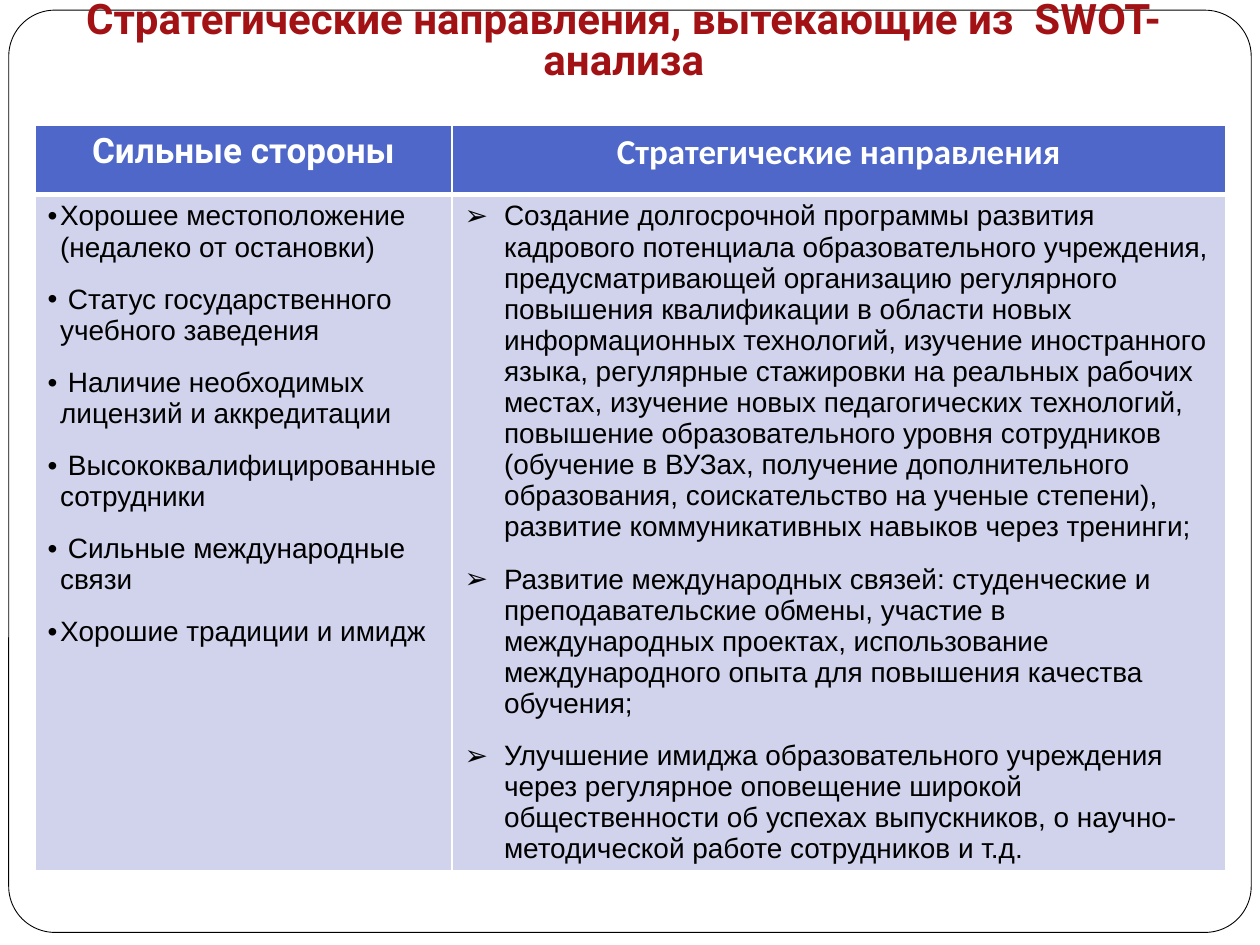
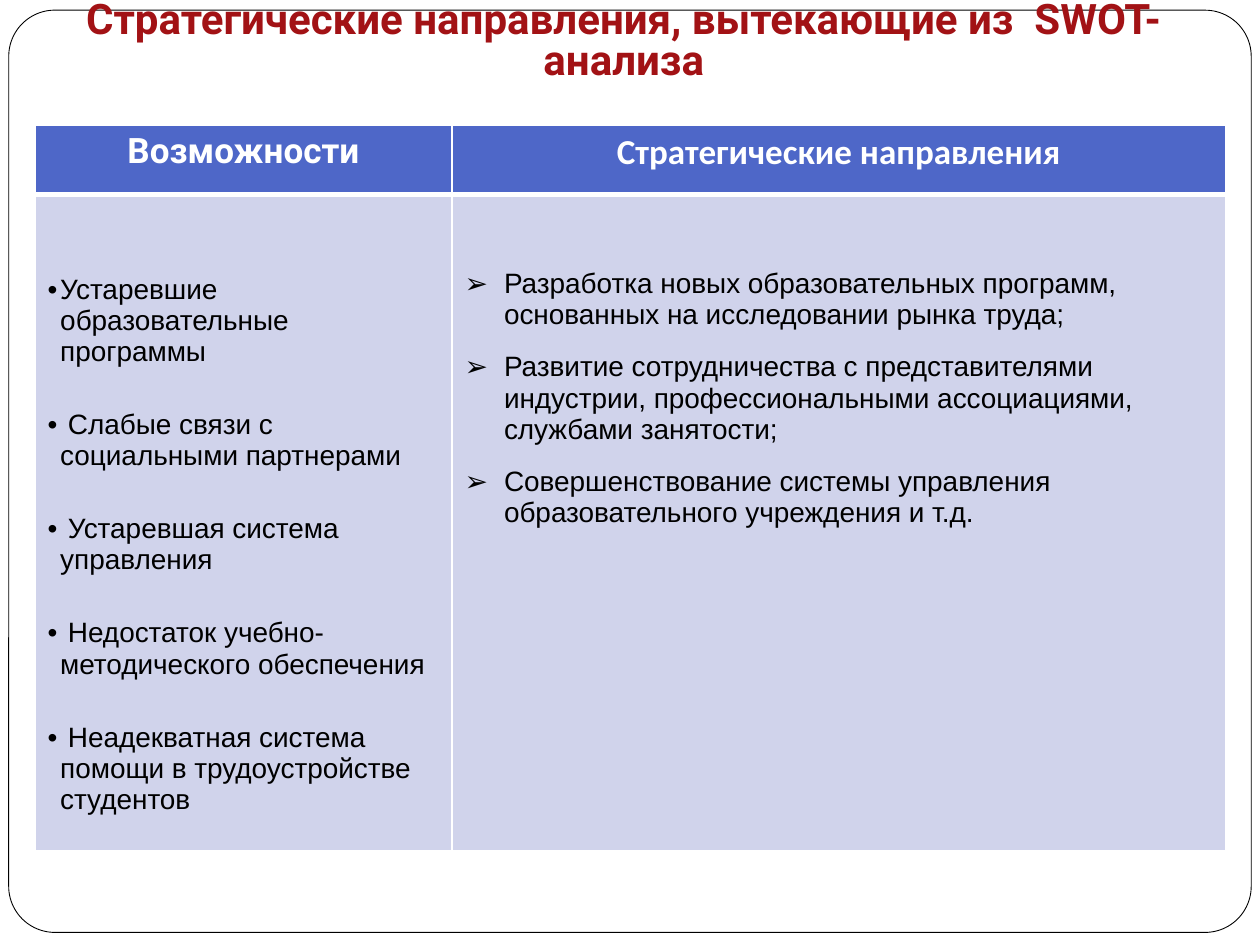
"""Builds two slides that set SWOT findings beside strategic directions."""

from dataclasses import dataclass

from lxml.etree import SubElement
from pptx import Presentation
from pptx.dml.color import RGBColor
from pptx.enum.shapes import MSO_SHAPE
from pptx.enum.text import MSO_ANCHOR, MSO_AUTO_SIZE, PP_ALIGN
from pptx.oxml.ns import qn
from pptx.slide import Slide
from pptx.table import _Cell
from pptx.text.text import _Paragraph
from pptx.util import Pt


@dataclass(frozen=True)
class Theme:
    white: str = "FFFFFF"
    ink: str = "000000"
    red: str = "A21215"
    blue: str = "4E67C8"
    pale: str = "D0D3EB"
    title: float = 24
    head: float = 20
    body: float = 16


@dataclass(frozen=True)
class Style:
    font: str
    size: float
    tint: str
    bold: bool


@dataclass(frozen=True)
class Mark:
    char: str
    indent: float


@dataclass(frozen=True)
class Column:
    head: str
    style: Style
    mark: Mark
    items: tuple[str, ...]
    gap: float = 12
    top: float = 3.6


@dataclass(frozen=True)
class Page:
    height: float
    left: Column
    right: Column


THEME = Theme()
TITLE = Style("Roboto", THEME.title, THEME.red, True)
HEAD = Style("Roboto", THEME.head, THEME.white, True)
PLAN = Style("Calibri", THEME.head, THEME.white, True)
BODY = Style("Arial", THEME.body, THEME.ink, False)
DOT = Mark("•", 7.2)
ARROW = Mark("➢", 22.5)
WIDTHS = (238.3, 442.1)
HEADING = "Стратегические направления, вытекающие из  SWOT-анализа"
PLANS = "Стратегические направления"

PAGES = (
    Page(
        386,
        Column("Сильные стороны", HEAD, DOT, (
            "Хорошее местоположение (недалеко от остановки)",
            " Статус государственного учебного заведения",
            " Наличие необходимых лицензий и аккредитации",
            " Высококвалифицированные сотрудники",
            " Сильные международные связи",
            "Хорошие традиции и имидж",
        )),
        Column(PLANS, PLAN, ARROW, (
            "Создание долгосрочной программы развития кадрового потенциала "
            "образовательного учреждения, предусматривающей организацию "
            "регулярного повышения квалификации в области новых "
            "информационных технологий, изучение иностранного языка, "
            "регулярные стажировки на реальных рабочих местах, изучение "
            "новых педагогических технологий, повышение образовательного "
            "уровня сотрудников (обучение в ВУЗах, получение "
            "дополнительного образования, соискательство на ученые "
            "степени), развитие коммуникативных навыков через тренинги;",
            "Развитие международных связей: студенческие и преподавательские "
            "обмены, участие в международных проектах, использование "
            "международного опыта для повышения качества обучения;",
            "Улучшение имиджа образовательного учреждения через регулярное "
            "оповещение широкой общественности об успехах выпускников, "
            "о научно-методической работе сотрудников и т.д.",
        )),
    ),
    Page(
        375,
        Column("Возможности", HEAD, DOT, (
            "Устаревшие образовательные программы",
            " Слабые связи с социальными партнерами",
            " Устаревшая система управления",
            " Недостаток учебно-методического обеспечения",
            " Неадекватная система помощи в трудоустройстве студентов",
        ), gap=24, top=45.5),
        Column(PLANS, PLAN, ARROW, (
            "Разработка новых образовательных программ, основанных "
            "на исследовании рынка труда;",
            "Развитие сотрудничества с представителями индустрии, "
            "профессиональными ассоциациями, службами занятости;",
            "Совершенствование системы управления образовательного "
            "учреждения и т.д.",
        ), top=42.4),
    ),
)


def apply(target: object, values: dict[str, object]) -> None:
    for name, value in values.items():
        setattr(target, name, value)


def write(para: _Paragraph, text: str, style: Style) -> None:
    run = para.add_run()
    run.text = text
    apply(run.font, {"name": style.font, "size": Pt(style.size), "bold": style.bold})
    run.font.color.rgb = RGBColor.from_string(style.tint)


def paint(cell: _Cell, tint: str, top: float, bottom: float) -> None:
    cell.fill.solid()
    cell.fill.fore_color.rgb = RGBColor.from_string(tint)
    props = cell._tc.get_or_add_tcPr()
    edges = {"a:lnL": 1, "a:lnR": 1, "a:lnT": top, "a:lnB": bottom}
    for spot, (tag, width) in enumerate(edges.items()):
        line = SubElement(props, qn(tag), w=str(Pt(width)))
        fill = SubElement(line, qn("a:solidFill"))
        SubElement(fill, qn("a:srgbClr"), val=THEME.white)
        props.insert(spot, line)


def add_list(cell: _Cell, column: Column) -> None:
    cell.margin_top = Pt(column.top)
    frame = cell.text_frame
    indent = Pt(column.mark.indent)
    for count, item in enumerate(column.items):
        para = frame.add_paragraph() if count else frame.paragraphs[0]
        para.space_before = Pt(column.gap if count else 0)
        props = para._p.get_or_add_pPr()
        props.set("marL", str(indent))
        props.set("indent", str(-indent))
        SubElement(props, qn("a:buFont"), typeface=BODY.font)
        SubElement(props, qn("a:buChar"), char=column.mark.char)
        write(para, item, BODY)


def add_frame(slide: Slide) -> None:
    frame = slide.shapes.add_shape(
        MSO_SHAPE.ROUNDED_RECTANGLE, Pt(5), Pt(5.8), Pt(710), Pt(527)
    )
    frame.adjustments[0] = 0.05
    frame.shadow.inherit = False
    frame.fill.solid()
    frame.fill.fore_color.rgb = RGBColor.from_string(THEME.white)
    frame.line.color.rgb = RGBColor.from_string(THEME.ink)
    frame.line.width = Pt(0.5)


def add_title(slide: Slide) -> None:
    box = slide.shapes.add_textbox(Pt(20), Pt(11.5), Pt(673), Pt(43.2))
    frame = box.text_frame
    apply(frame, {
        "word_wrap": True,
        "auto_size": MSO_AUTO_SIZE.NONE,
        "vertical_anchor": MSO_ANCHOR.BOTTOM,
        "margin_bottom": Pt(7.2),
    })
    para = frame.paragraphs[0]
    apply(para, {"alignment": PP_ALIGN.CENTER, "line_spacing": 0.8})
    write(para, HEADING, TITLE)


def add_grid(slide: Slide, page: Page) -> None:
    heights = (39.6, page.height)
    table = slide.shapes.add_table(
        2, 2, Pt(20), Pt(71.5), Pt(sum(WIDTHS)), Pt(sum(heights))
    ).table
    apply(table, {"first_row": False, "horz_banding": False})
    for row, height in zip(table.rows, heights):
        row.height = Pt(height)
    for index, column in enumerate((page.left, page.right)):
        table.columns[index].width = Pt(WIDTHS[index])
        head, body = table.cell(0, index), table.cell(1, index)
        paint(head, THEME.blue, 1, 3)
        paint(body, THEME.pale, 3, 1)
        para = head.text_frame.paragraphs[0]
        para.alignment = PP_ALIGN.CENTER
        write(para, column.head, column.style)
        add_list(body, column)


def main() -> None:
    deck = Presentation()
    apply(deck, {"slide_width": Pt(720), "slide_height": Pt(540)})
    for page in PAGES:
        slide = deck.slides.add_slide(deck.slide_layouts[6])
        add_frame(slide)
        add_title(slide)
        add_grid(slide, page)
    deck.save("out.pptx")


if __name__ == "__main__":
    main()
